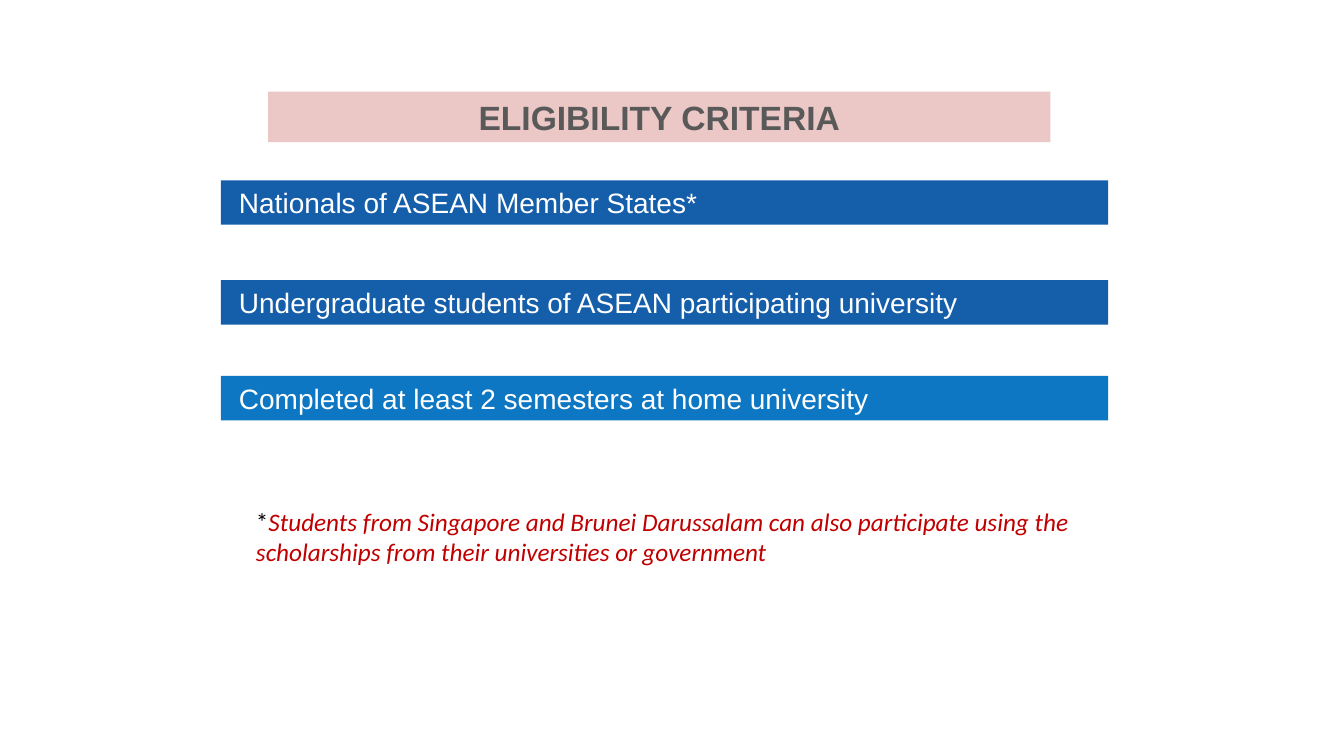
from pptx import Presentation
from pptx.dml.color import RGBColor
from pptx.enum.shapes import MSO_SHAPE
from pptx.enum.text import MSO_ANCHOR, PP_ALIGN
from pptx.oxml.ns import qn
from pptx.util import Inches, Pt
from lxml.etree import SubElement

PINK = RGBColor(0xE6, 0xB9, 0xB8)
DARK_BLUE = RGBColor(0x09, 0x56, 0xA6)
BLUE = RGBColor(0x00, 0x70, 0xC0)
GREY = RGBColor(0x59, 0x59, 0x59)
WHITE = RGBColor(0xFF, 0xFF, 0xFF)
BLACK = RGBColor(0x00, 0x00, 0x00)
RED = RGBColor(0xC0, 0x00, 0x00)

BAR_LEFT, BAR_WIDTH, BAR_HEIGHT = 2.19, 8.8, 0.44
CRITERIA = [
    (1.79, "Nationals of ASEAN Member States*", DARK_BLUE),
    (2.78, "Undergraduate students of ASEAN participating university", DARK_BLUE),
    (3.73, "Completed at least 2 semesters at home university", BLUE),
]


def style_font(font, name, size, color):
    font.name = name
    font.size = Pt(size)
    font.color.rgb = color


def add_band(slide, box, text, fill, opacity):
    """Add a translucent, borderless rectangle and return its shape."""
    band = slide.shapes.add_shape(MSO_SHAPE.RECTANGLE, *map(Inches, box))
    band.shadow.inherit = False
    band.line.fill.background()
    band.fill.solid()
    band.fill.fore_color.rgb = fill
    color = band.fill._xPr.find(qn("a:solidFill"))[0]
    SubElement(color, qn("a:alpha"), val=str(opacity * 1000))
    band.text_frame.text = text
    band.text_frame.word_wrap = True
    band.text_frame.vertical_anchor = MSO_ANCHOR.MIDDLE
    return band


def add_heading(slide, box):
    band = add_band(slide, box, "ELIGIBILITY CRITERIA", PINK, 80)
    para = band.text_frame.paragraphs[0]
    para.alignment = PP_ALIGN.CENTER
    style_font(para.runs[0].font, "Arial", 24, GREY)
    para.runs[0].font.bold = True


def add_criterion(slide, box, text, fill):
    band = add_band(slide, box, text, fill, 95)
    band.text_frame.margin_left = Inches(0.18)
    para = band.text_frame.paragraphs[0]
    para.alignment = PP_ALIGN.LEFT
    style_font(para.runs[0].font, "Arial", 20, WHITE)


def add_footnote(slide, box):
    note = slide.shapes.add_textbox(*map(Inches, box))
    note.text_frame.word_wrap = True
    para = note.text_frame.paragraphs[0]
    star = para.add_run()
    star.text = "*"
    style_font(star.font, "Calibri", 18, BLACK)
    span = para.add_run()
    span.text = ("Students from Singapore and Brunei Darussalam can also participate "
                 "using the scholarships from their universities or government")
    style_font(span.font, "Calibri", 18, RED)
    span.font.italic = True


def main():
    deck = Presentation()
    deck.slide_width, deck.slide_height = Inches(13.33), Inches(7.5)
    slide = deck.slides.add_slide(deck.slide_layouts[6])
    for top, text, fill in CRITERIA:
        add_criterion(slide, (BAR_LEFT, top, BAR_WIDTH, BAR_HEIGHT), text, fill)
    add_footnote(slide, (2.44, 4.97, 8.55, 0.71))
    add_heading(slide, (2.66, 0.91, 7.76, 0.5))
    deck.save("out.pptx")


if __name__ == "__main__":
    main()
